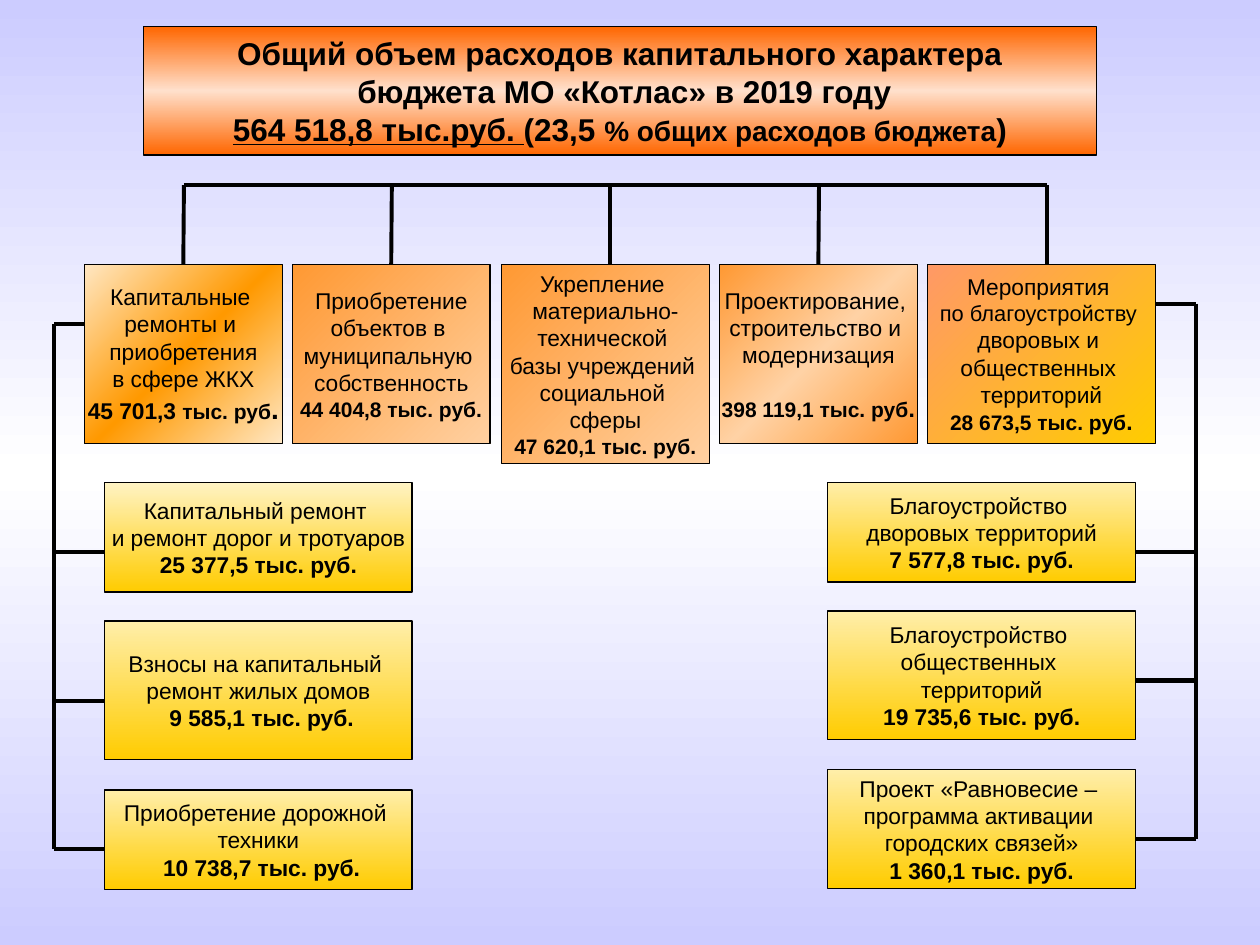
from copy import deepcopy
from dataclasses import dataclass
from typing import NamedTuple

from lxml import etree
from pptx import Presentation
from pptx import util as u
from pptx.dml import color as c
from pptx.enum import shapes as s, text as t
from pptx.oxml import ns


class Span(NamedTuple):
    text: str
    size: float = 13
    bold: bool = False
    underline: bool = False


class Gradient(NamedTuple):
    colors: tuple
    angle: int


@dataclass
class Box:
    left: float
    top: float
    width: float
    height: float
    gradient: Gradient
    lines: list
    amount_gap: float = 0


class Line(NamedTuple):
    x1: float
    y1: float
    x2: float
    y2: float
    weight: float = 2.25


def hex_color(value: str) -> c.RGBColor:
    return c.RGBColor.from_string(value)


def apply_format(target, values: dict) -> None:
    for name, value in values.items():
        setattr(target, name, value)


def paint(fill, element, gradient: Gradient) -> None:
    fill.gradient()
    fill.gradient_angle = (360 - gradient.angle) % 360
    stop_list = element.xpath(".//a:gsLst")[0]
    for _ in gradient.colors[2:]:
        stop_list.append(deepcopy(stop_list[0]))
    last = len(gradient.colors) - 1
    for index, (stop, value) in enumerate(zip(fill.gradient_stops, gradient.colors)):
        stop.color.rgb = hex_color(value)
        stop.position = index / last


def write_lines(shape, box: Box) -> None:
    frame = shape.text_frame
    apply_format(frame, {
        "word_wrap": False,
        "auto_size": t.MSO_AUTO_SIZE.NONE,
        "vertical_anchor": t.MSO_ANCHOR.MIDDLE,
    })
    for index, spans in enumerate(box.lines):
        para = frame.add_paragraph() if index else frame.paragraphs[0]
        para.alignment = t.PP_ALIGN.CENTER
        for span in spans:
            run = para.add_run()
            run.text = span.text
            apply_format(run.font, {
                "name": "Arial",
                "size": u.Pt(span.size),
                "bold": span.bold,
                "underline": span.underline,
            })
            run.font.color.rgb = hex_color("000000")
    if box.amount_gap:
        frame.paragraphs[-1].space_before = u.Pt(box.amount_gap)


def format_box(shape, box: Box) -> None:
    apply_format(shape, {
        name: u.Inches(getattr(box, name)) for name in ("left", "top", "width", "height")
    })
    paint(shape.fill, shape.element, box.gradient)
    shape.line.color.rgb = hex_color("000000")
    shape.line.width = u.Pt(0.75)
    write_lines(shape, box)


def draw_box(page, box: Box):
    shape = page.shapes.add_shape(s.MSO_SHAPE.RECTANGLE, 0, 0, 0, 0)
    shape.shadow.inherit = False
    format_box(shape, box)
    return shape


def draw_line(page, line: Line):
    connector = page.shapes.add_connector(
        s.MSO_CONNECTOR.STRAIGHT, *(u.Inches(value) for value in line[:4]))
    connector.line.color.rgb = hex_color("000000")
    connector.line.width = u.Pt(line.weight)
    etree.SubElement(connector.element.spPr, ns.qn("a:effectLst"))
    return connector


def text_lines(*lines: str) -> list:
    return [[Span(line)] for line in lines]


def amount(text: str, size: float = 13) -> Span:
    return Span(text, size, bold=True)


def detail(left: float, top: float, height: float, *lines: str, light: str = "FFEEA9") -> Box:
    return Box(left, top, 2.44, height, Gradient((light, "FFCC00"), 90),
               text_lines(*lines[:-1]) + [[amount(lines[-1])]])


BACKGROUND = Gradient(("CCCCFF", "FFFFFF", "CCCCFF"), 90)
ORANGE = Gradient(("FF9933", "FFD0A1"), 45)

TITLE = Box(1.14, 0.21, 7.56, 1.02, Gradient(("FF6600", "FFE0CC", "FF6600"), 90), [
    [amount("Общий объем расходов капитального характера", 18)],
    [amount(" бюджета МО «Котлас» в 2019 году", 18)],
    [Span("564 518,8 тыс.руб. ", 18, True, True), amount("(23,5 ", 18),
     amount("% общих расходов бюджета", 16), amount(")", 18)],
])

SECTIONS = [
    Box(0.67, 2.1, 1.57, 1.42, Gradient(("FFE7C3", "FF9900", "FFE7C3"), 45),
        text_lines("Капитальные ", "ремонты и ", "приобретения", "в сфере ЖКХ")
        + [[amount("45 701,3 "), amount("тыс. руб", 12), amount(".", 16)]]),
    Box(2.32, 2.1, 1.57, 1.42, ORANGE,
        text_lines("Приобретение", "объектов в ", "муниципальную ", "собственность")
        + [[amount("44 404,8 тыс. руб.", 12)]]),
    Box(3.98, 2.1, 1.65, 1.58, ORANGE,
        text_lines("Укрепление ", "материально-", "технической ", "базы учреждений ",
                   "социальной ", "сферы")
        + [[amount("47 620,1 тыс. руб.", 12)]]),
    Box(5.71, 2.1, 1.57, 1.42, Gradient(("FF9933", "FFD2A5", "FF9933"), 45),
        text_lines("Проектирование, ", "строительство и ", "модернизация")
        + [[amount("398 119,1 тыс. руб", 12), amount(".")]], amount_gap=15),
    Box(7.36, 2.1, 1.81, 1.42, Gradient(("FF9966", "FFCC00"), 45),
        text_lines("Мероприятия ") + [[Span("по благоустройству ", 12.5)]]
        + text_lines("дворовых и ", "общественных ", "территорий")
        + [[amount("28 673,5 тыс. руб", 12), amount(".")]]),
]
DROPS = [1.46, 3.11, 4.84, 6.5, 8.31]

DETAILS = [
    detail(0.83, 3.83, 0.87, "Капитальный ремонт ", "и ремонт дорог и тротуаров",
           "25 377,5 тыс. руб.", light="FFF3C3"),
    detail(0.83, 4.93, 1.1, "Взносы на капитальный ", "ремонт жилых домов",
           " 9 585,1 тыс. руб."),
    detail(0.83, 6.27, 0.79, "Приобретение дорожной ", "техники", " 10 738,7 тыс. руб."),
    detail(6.57, 3.83, 0.79, "Благоустройство ", "дворовых территорий", "7 577,8 тыс. руб."),
    detail(6.57, 4.85, 1.02, "Благоустройство ", "общественных ", "территорий",
           "19 735,6 тыс. руб."),
    detail(6.57, 6.11, 0.94, "Проект «Равновесие – ", "программа активации ",
           "городских связей»", "1 360,1 тыс. руб."),
]

BUS_Y, LEFT_X, RIGHT_X = 1.47, 0.43, 9.49
LINES = [
    Line(DROPS[0], BUS_Y, DROPS[-1], BUS_Y),
    Line(LEFT_X, 2.57, LEFT_X, 6.74),
    Line(LEFT_X, 2.57, 0.67, 2.57),
    Line(RIGHT_X, 2.41, RIGHT_X, 6.66),
    Line(RIGHT_X, 2.41, 9.17, 2.41),
    *(Line(LEFT_X, y, 0.83, y) for y in (4.38, 5.56, 6.74)),
    *(Line(9.02, y, RIGHT_X, y, 2.5) for y in (4.38, 5.4, 6.66)),
]


def main() -> None:
    deck = Presentation()
    deck.slide_width, deck.slide_height = u.Inches(10), u.Inches(7.5)
    page = deck.slides.add_slide(deck.slide_layouts[5])
    paint(page.background.fill, page.element, BACKGROUND)
    format_box(page.shapes.title, TITLE)
    for box, x in zip(SECTIONS, DROPS):
        shape = draw_box(page, box)
        connector = draw_line(page, Line(x, BUS_Y, x, box.top))
        if abs(box.left + box.width / 2 - x) < 0.01:
            connector.end_connect(shape, 0)
    for box in DETAILS:
        draw_box(page, box)
    for line in LINES:
        draw_line(page, line)
    deck.save("out.pptx")


if __name__ == "__main__":
    main()
